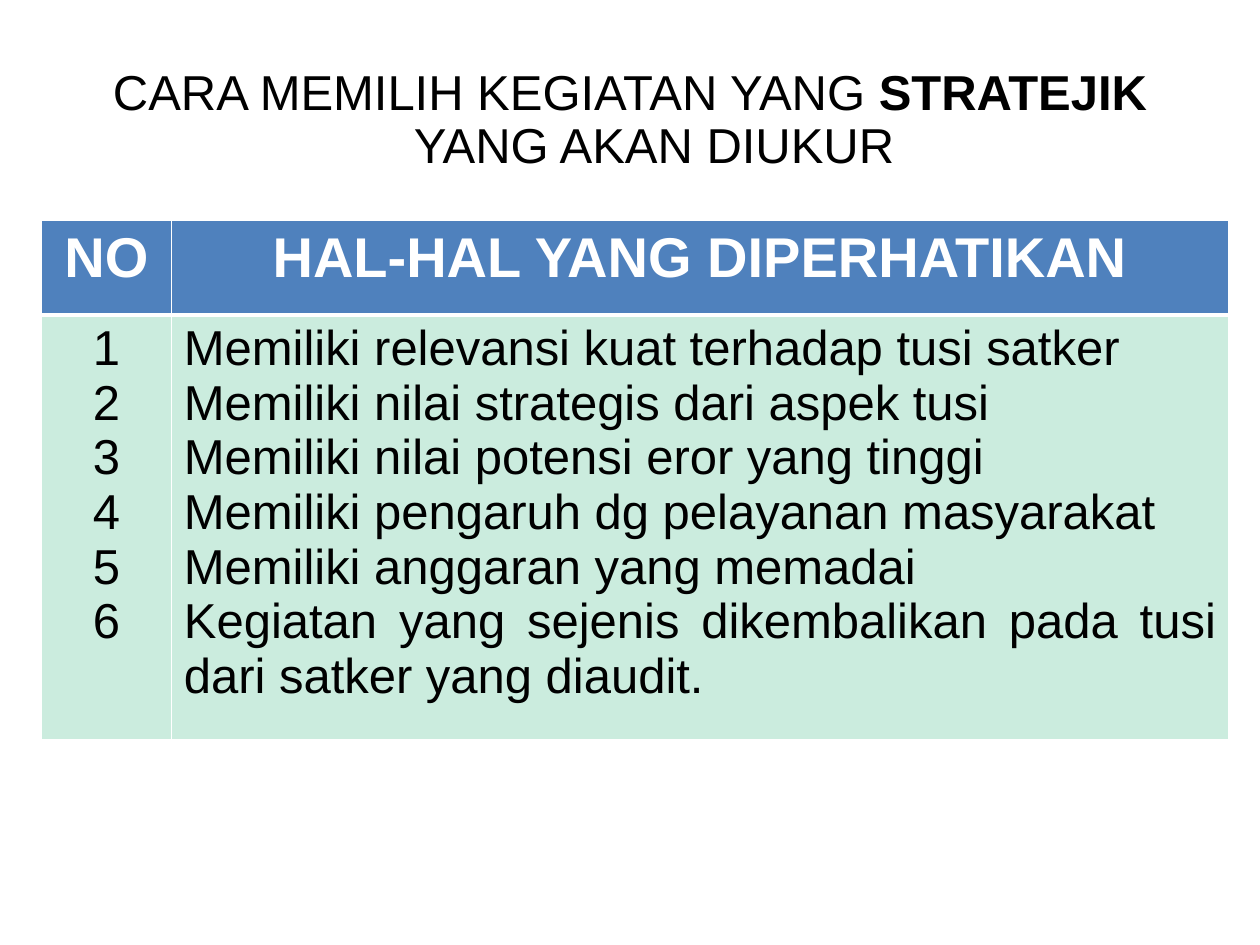
from dataclasses import dataclass

from lxml import etree
from pptx import Presentation
from pptx.dml.color import RGBColor
from pptx.enum.text import MSO_ANCHOR, PP_ALIGN
from pptx.oxml.ns import qn
from pptx.util import Inches, Pt

CENTER = PP_ALIGN.CENTER
JUSTIFY = PP_ALIGN.JUSTIFY
MIDDLE = MSO_ANCHOR.MIDDLE
TITLE_ONLY = 5


@dataclass(frozen=True)
class Theme:
    font: str = "Arial"
    ink: str = "000000"
    white: str = "FFFFFF"
    header_fill: str = "4F81BD"
    body_fill: str = "CBECDE"
    text_size: int = 28
    header_size: int = 32
    thin: int = 1
    thick: int = 3


THEME = Theme()
COLUMN_WIDTHS = (1.03, 8.39)
ROW_HEIGHTS = (0.75, 3.37)
TITLE_PARTS = (
    ("CARA MEMILIH KEGIATAN YANG ", False),
    ("STRATEJIK", True),
    (" YANG AKAN DIUKUR", False),
)
HEADINGS = ("NO", "HAL-HAL YANG DIPERHATIKAN")
CRITERIA = (
    "Memiliki relevansi kuat terhadap tusi satker",
    "Memiliki nilai strategis dari aspek tusi",
    "Memiliki nilai potensi eror yang tinggi",
    "Memiliki pengaruh dg pelayanan masyarakat",
    "Memiliki anggaran yang memadai",
    "Kegiatan yang sejenis dikembalikan pada tusi dari satker yang diaudit.",
)


def format_run(run, size, color, bold):
    run.font.name = THEME.font
    run.font.size = Pt(size)
    run.font.bold = bold
    run.font.color.rgb = RGBColor.from_string(color)


def set_title(slide):
    title = slide.shapes.title
    title.left, title.top = Inches(0.75), Inches(0.42)
    title.width, title.height = Inches(8.5), Inches(1.08)
    title.text_frame.vertical_anchor = MIDDLE
    heading = title.text_frame.paragraphs[0]
    heading.alignment = CENTER
    heading.line_spacing = 0.9
    properties = heading._p.get_or_add_pPr()
    properties.set("marL", str(Inches(0.38)))
    properties.set("indent", str(Inches(-0.38)))
    for words, bold in TITLE_PARTS:
        run = heading.add_run()
        run.text = words
        format_run(run, THEME.text_size, THEME.ink, bold)


def set_borders(cell, top, bottom):
    properties = cell._tc.get_or_add_tcPr()
    widths = {"lnL": THEME.thin, "lnR": THEME.thin, "lnT": top, "lnB": bottom}
    for side, width in widths.items():
        border = etree.SubElement(properties, qn(f"a:{side}"), w=str(Pt(width)))
        fill = etree.SubElement(border, qn("a:solidFill"))
        etree.SubElement(fill, qn("a:srgbClr"), val=THEME.white)


def fill_cell(cell, lines, alignment, is_header):
    if is_header:
        set_borders(cell, THEME.thin, THEME.thick)
        fill, size, color = THEME.header_fill, THEME.header_size, THEME.white
    else:
        set_borders(cell, THEME.thick, THEME.thin)
        fill, size, color = THEME.body_fill, THEME.text_size, THEME.ink
    cell.fill.solid()
    cell.fill.fore_color.rgb = RGBColor.from_string(fill)
    cell.text_frame.text = "\n".join(lines)
    for paragraph in cell.text_frame.paragraphs:
        paragraph.alignment = alignment
        for run in paragraph.runs:
            format_run(run, size, color, is_header)


def add_criteria_table(slide):
    table = slide.shapes.add_table(
        len(ROW_HEIGHTS), len(COLUMN_WIDTHS), Inches(0.33), Inches(1.75),
        Inches(sum(COLUMN_WIDTHS)), Inches(sum(ROW_HEIGHTS)),
    ).table
    for column, width in zip(table.columns, COLUMN_WIDTHS):
        column.width = Inches(width)
    for row, height in zip(table.rows, ROW_HEIGHTS):
        row.height = Inches(height)
    for index, heading in enumerate(HEADINGS):
        fill_cell(table.cell(0, index), [heading], CENTER, True)
    numbers = [str(number) for number in range(1, len(CRITERIA) + 1)]
    fill_cell(table.cell(1, 0), numbers, CENTER, False)
    fill_cell(table.cell(1, 1), CRITERIA, JUSTIFY, False)


def main():
    presentation = Presentation()
    presentation.slide_width = Inches(10)
    presentation.slide_height = Inches(7.5)
    slide = presentation.slides.add_slide(presentation.slide_layouts[TITLE_ONLY])
    set_title(slide)
    add_criteria_table(slide)
    presentation.save("out.pptx")


if __name__ == "__main__":
    main()
